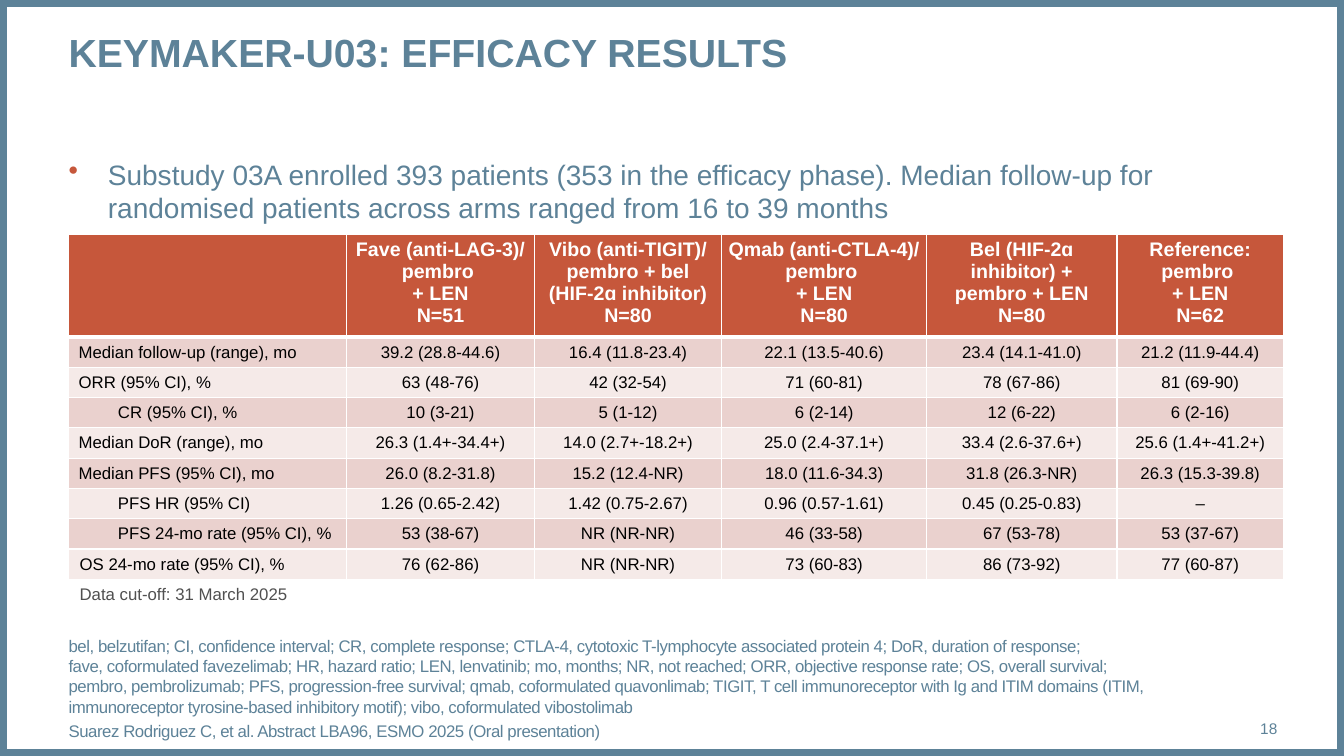
from copy import deepcopy
from dataclasses import dataclass

from lxml.etree import SubElement
from pptx import Presentation
from pptx.dml.color import RGBColor
from pptx.enum.shapes import MSO_SHAPE
from pptx.enum.text import MSO_ANCHOR, PP_ALIGN
from pptx.oxml.ns import qn
from pptx.util import Pt

PX = 9144  # 100 px to the inch


@dataclass(frozen=True)
class Theme:
    font: str = "Arial"
    blue: str = "5D8298"
    rust: str = "C6573B"
    dark: str = "EAD1CE"
    light: str = "F5EAE8"
    white: str = "FFFFFF"
    black: str = "000000"
    gray: str = "505050"
    title: int = 28
    body: int = 20
    head: int = 14
    small: int = 12
    page: int = 11


def put(item, values):
    for name, value in values.items():
        setattr(item, name, value)


def px(*sizes):
    return [size * PX for size in sizes]


class Deck:
    def __init__(self, theme):
        self.theme = theme
        self.show = Presentation()
        put(self.show, {"slide_width": 1333 * PX, "slide_height": 750 * PX})
        self.slide = self.show.slides.add_slide(self.show.slide_layouts[6])

    def style(self, frame, size, color, bold=False, align=PP_ALIGN.LEFT,
              before=0, left=0, indent=0, bullet=None, track=0):
        """Format all text of a frame; space before, left and indent as given."""
        for part in frame.paragraphs:
            props = part._p.get_or_add_pPr()
            props.set("marL", str(left * PX))
            props.set("indent", str(indent * PX))
            if bullet:
                tint = SubElement(props, qn("a:buClr"))
                SubElement(tint, qn("a:srgbClr"), val=self.theme.rust)
                SubElement(props, qn("a:buChar"), char=bullet)
            part.alignment = align
            if part is not frame.paragraphs[0] and before:
                part.space_before = Pt(before)
            for run in part.runs:
                put(run.font, {"name": self.theme.font, "size": Pt(size), "bold": bold})
                run.font.color.rgb = RGBColor.from_string(color)
                if track:
                    run._r.get_or_add_rPr().set("spc", str(track))
            for gap in part._p.findall(qn("a:br")):
                gap.append(deepcopy(part.runs[0]._r.rPr))

    def border(self, width):
        box = self.slide.shapes.add_shape(
            MSO_SHAPE.RECTANGLE, 0, 0, self.show.slide_width, self.show.slide_height)
        box.shadow.inherit = False
        box.fill.background()
        box.line.width = Pt(width)
        box.line.color.rgb = RGBColor.from_string(self.theme.blue)

    def text(self, words, place, size, anchor=MSO_ANCHOR.TOP, **look):
        frame = self.slide.shapes.add_textbox(*px(*place)).text_frame
        put(frame, {"word_wrap": True, "vertical_anchor": anchor, "margin_left": 0,
                    "margin_right": 0, "margin_top": 0, "margin_bottom": 0})
        frame.text = words
        self.style(frame, size, self.theme.blue, **look)

    def cell(self, cell, words, fill, edges, pad, size, color, **look):
        """Fill one table cell; edges are widths in points by side."""
        side, end = px(*pad)
        put(cell, {"text": words, "margin_left": side, "margin_right": side,
                   "margin_top": end, "margin_bottom": end})
        props = cell._tc.get_or_add_tcPr()
        for name, width in edges.items():
            line = SubElement(props, qn("a:ln" + name), w=str(Pt(width)))
            paint = SubElement(line, qn("a:solidFill"))
            SubElement(paint, qn("a:srgbClr"), val=self.theme.white)
        if fill:
            cell.fill.solid()
            cell.fill.fore_color.rgb = RGBColor.from_string(fill)
        else:
            cell.fill.background()
        self.style(cell.text_frame, size, color, **look)

    def table(self, place, widths, heads, rows, note):
        look = self.theme
        last = len(rows) + 1
        grid = self.slide.shapes.add_table(last + 1, len(widths), *px(*place)).table
        put(grid, {"first_row": False, "horz_banding": False})
        for col, width in zip(grid.columns, widths):
            col.width = width * PX
        for num, row in enumerate(grid.rows):
            row.height = (26 if num else 82) * PX
        thin = {"L": 1, "R": 1, "T": 1, "B": 1}
        tight, wide = (2, 4), (10, 5)
        for col, words in enumerate(heads):
            self.cell(grid.cell(0, col), words, look.rust, {**thin, "B": 3}, tight,
                      look.head, look.white, bold=True, align=PP_ALIGN.CENTER)
        for num, (label, indent, values) in enumerate(rows, 1):
            fill = look.dark if num % 2 else look.light
            edges = {**thin, "T": 3} if num == 1 else thin
            for col, words in enumerate([label, *values.split("|")]):
                cell = grid.cell(num, col)
                cell.vertical_anchor = MSO_ANCHOR.MIDDLE
                form = {"align": PP_ALIGN.CENTER} if col else {"indent": indent}
                self.cell(cell, words, fill, edges, tight if col else wide,
                          look.small, look.black, **form)
        foot = grid.cell(last, 0)
        foot.merge(grid.cell(last, len(widths) - 1))
        foot.vertical_anchor = MSO_ANCHOR.MIDDLE
        self.cell(foot, note, None, thin, wide, look.small, look.gray, indent=1)


HEADS = [
    "",
    "Fave (anti-LAG-3)/ pembro \v+ LEN\vN=51",
    "Vibo (anti-TIGIT)/\vpembro + bel\v(HIF-2ɑ inhibitor)\vN=80",
    "Qmab (anti-CTLA-4)/\vpembro \v+ LEN\nN=80",
    "Bel (HIF-2ɑ\vinhibitor) +\vpembro + LEN\nN=80",
    "Reference:\vpembro \v+ LEN\nN=62",
]
# label, first-line indent, one value per arm
ROWS = [
    ("Median follow-up (range), mo", 0,
     "39.2 (28.8-44.6)|16.4 (11.8-23.4)|22.1 (13.5-40.6)|23.4 (14.1-41.0)|21.2 (11.9-44.4)"),
    ("ORR (95% CI), %", 0, "63 (48-76)|42 (32-54)|71 (60-81)|78 (67-86)|81 (69-90)"),
    ("CR (95% CI), %", 39, "10 (3-21)|5 (1-12)|6 (2-14)|12 (6-22)|6 (2-16)"),
    ("Median DoR (range), mo", 0,
     "26.3 (1.4+-34.4+)|14.0 (2.7+-18.2+)|25.0 (2.4-37.1+)|33.4 (2.6-37.6+)|25.6 (1.4+-41.2+)"),
    ("Median PFS (95% CI), mo", 0,
     "26.0 (8.2-31.8)|15.2 (12.4-NR)|18.0 (11.6-34.3)|31.8 (26.3-NR)|26.3 (15.3-39.8)"),
    ("PFS HR (95% CI)", 39,
     "1.26 (0.65-2.42)|1.42 (0.75-2.67)|0.96 (0.57-1.61)|0.45 (0.25-0.83)|–"),
    ("PFS 24-mo rate (95% CI), %", 39,
     "53 (38-67)|NR (NR-NR)|46 (33-58)|67 (53-78)|53 (37-67)"),
    ("OS 24-mo rate (95% CI), %", 1,
     "76 (62-86)|NR (NR-NR)|73 (60-83)|86 (73-92)|77 (60-87)"),
]
NOTES = (
    "bel, belzutifan; CI, confidence interval; CR, complete response; CTLA-4, cytotoxic "
    "T-lymphocyte associated protein 4; DoR, duration of response; \v"
    "fave, coformulated favezelimab; HR, hazard ratio; LEN, lenvatinib; mo, months; NR, not "
    "reached; ORR, objective response rate; OS, overall survival; \v"
    "pembro, pembrolizumab; PFS, progression-free survival; qmab, coformulated quavonlimab; "
    "TIGIT, T cell immunoreceptor with Ig and ITIM domains (ITIM, immunoreceptor "
    "tyrosine-based inhibitory motif); vibo, coformulated vibostolimab\n"
    "Suarez Rodriguez C, et al. Abstract LBA96, ESMO 2025 (Oral presentation)"
)


def main():
    theme = Theme()
    deck = Deck(theme)
    deck.border(10)
    deck.text("Substudy 03A enrolled 393 patients (353 in the efficacy phase). Median follow-up "
              "for randomised patients across arms ranged from 16 to 39 months",
              (68, 156, 1199, 495), theme.body, left=39, indent=-39, bullet="•")
    deck.text("KEYMAKER-U03: EFFICACY RESULTS", (68, 28, 1199, 94), theme.title, bold=True)
    deck.text(NOTES, (68, 695, 1113, 40), theme.small, MSO_ANCHOR.BOTTOM, before=3, track=-30)
    deck.text("18", (1181, 703, 86, 40), theme.page, MSO_ANCHOR.MIDDLE, align=PP_ALIGN.RIGHT)
    deck.table((68, 233, 1205, 316), (276, 186, 186, 203, 189, 165), HEADS, ROWS,
               "Data cut-off: 31 March 2025")
    deck.show.save("out.pptx")


if __name__ == "__main__":
    main()
